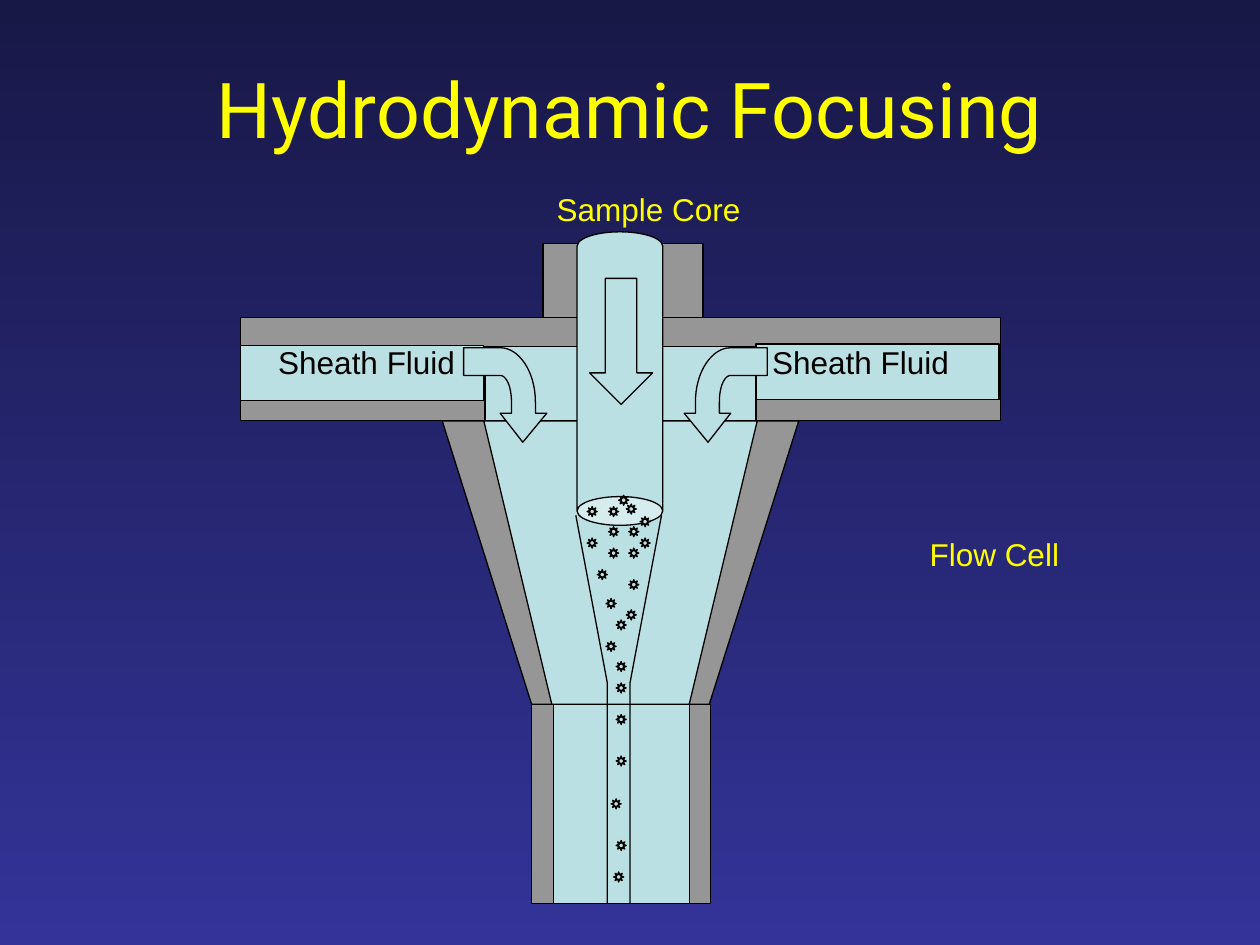
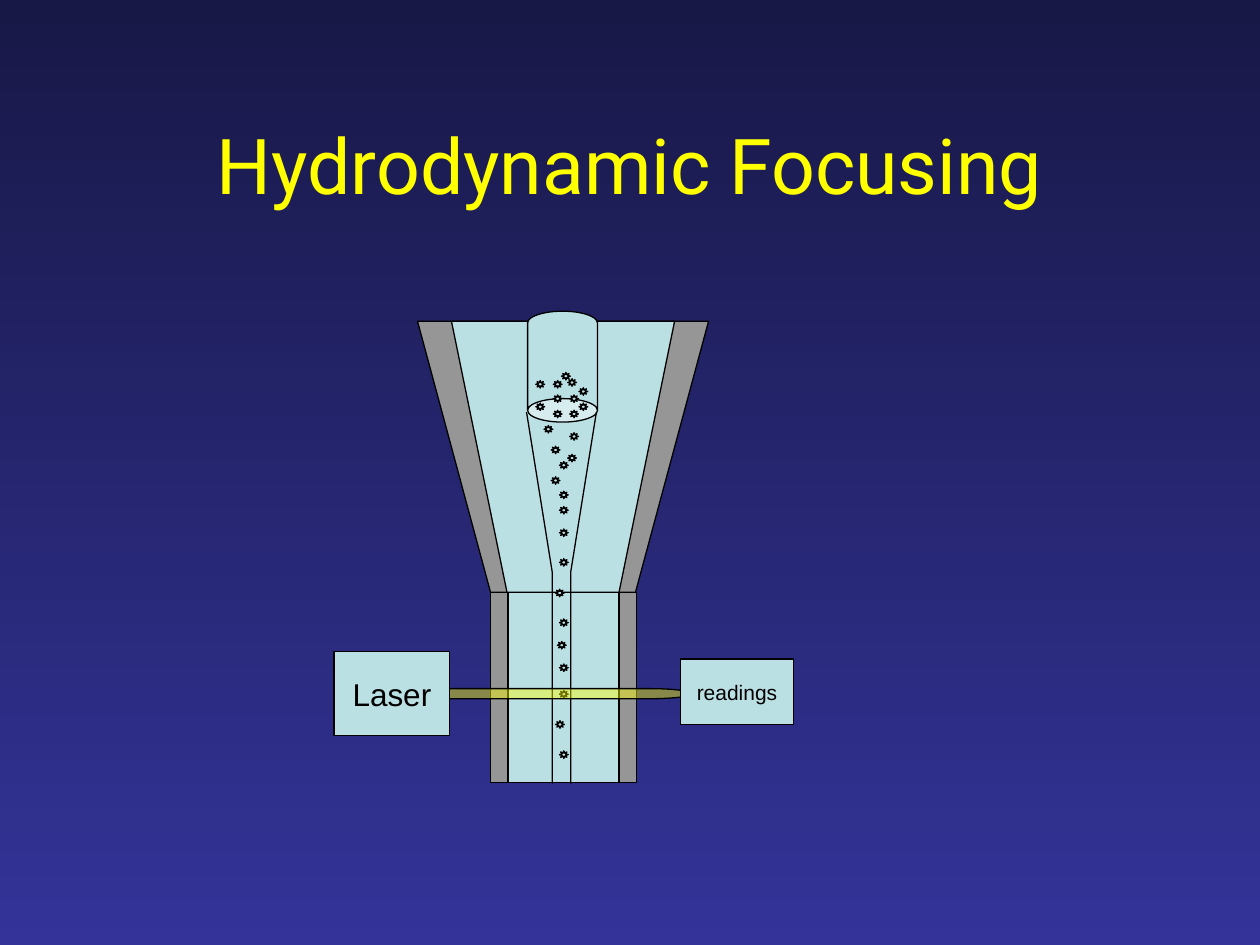
"""Build two slides on hydrodynamic focusing in a flow cell."""
from lxml.etree import SubElement
from pptx import Presentation
from pptx.dml.color import RGBColor
from pptx.enum.shapes import MSO_SHAPE
from pptx.enum.text import MSO_ANCHOR, MSO_AUTO_SIZE, PP_ALIGN
from pptx.oxml.ns import qn
from pptx.util import Inches, Pt

COLORS = {"top": "181847", "bottom": "333399", "accent": "FFFF00",
          "wall": "969696", "fluid": "BBE0E3", "ink": "000000"}
TITLE = "Hydrodynamic Focusing"

CHANNELS = [
    ("wall", 4.31, 1.93, 1.27, 1.01),
    ("wall", 1.91, 2.52, 6.03, 0.82),
    ("fluid", 6, 2.73, 1.93, 0.44),
    ("fluid", 1.91, 2.74, 1.93, 0.44),
    ("fluid", 3.85, 2.75, 2.15, 0.59),
]
LABELS = [
    ("Sheath Fluid", "ink", 2.11, 2.67, 1.61),
    ("Sheath Fluid", "ink", 6.03, 2.67, 1.61),
    ("Sample Core", "accent", 4.32, 1.46, 1.66),
    ("Flow Cell", "accent", 7.28, 4.2, 1.24),
]
BOXES = [("Laser", 18, 2.65, 5.17, 0.92, 0.67),
         ("readings", 12, 5.4, 5.23, 0.9, 0.52)]

FUNNELS = [("wall", (3.51, 4.22, 5.63, 6.34)),
           ("fluid", (3.84, 4.38, 5.47, 6.01))]
TUBES = [("wall", 4.22, 5.64), ("fluid", 4.39, 5.47)]
INJECTOR = (4.58, 5.26)
CORE_SIDES = [(4.57, 4.82), (5.25, 5)]
CELLS = [
    {"top": 3.34, "neck": 5.59, "end": 7.17, "injector": (1.84, 4.17),
     "core": (4.09, 5.42, 7.17), "sun": (0.08, 0.08),
     "x_map": (1, 0), "y_map": (1, 0)},
    {"top": 2.55, "neck": 4.7, "end": 6.21, "injector": (2.47, 3.35),
     "core": (3.27, 4.54, 6.22), "sun": (0.07, 0.06),
     "x_map": (0.816, 0.45), "y_map": (0.714, 0.15)},
]
PARTICLES = [
    (4.81, 4.75), (4.97, 4.84), (5.08, 4.27), (4.91, 3.93), (5.08, 4.1),
    (4.99, 4.35), (4.83, 4.02), (4.99, 4.18), (4.89, 4.92), (4.97, 4),
    (4.83, 4.18), (4.66, 4.02), (4.83, 4.35), (4.66, 4.27), (4.74, 4.52),
    (4.99, 4.6), (4.81, 5.09), (4.89, 5.25), (4.89, 5.42), (4.89, 5.67),
    (4.89, 6), (4.85, 6.34), (4.89, 6.67), (4.87, 6.92),
]
LOWER_PARTICLES = [(4.44, 5.27), (4.44, 5.48), (4.41, 5.72), (4.44, 5.96)]

OUTER_BEND = [(4.25, 3.19), (4.25, 2.95), (4.12, 2.76), (3.97, 2.76)]
INNER_BEND = [(3.97, 2.98), (4.02, 2.98), (4.06, 3.07), (4.06, 3.19)]
MIRROR_SUM = 9.77


def rgb(name):
    return RGBColor.from_string(COLORS[name])


def style(sp, fill):
    sp.shadow.inherit = False
    if fill:
        sp.fill.solid()
        sp.fill.fore_color.rgb = rgb(fill)
    else:
        sp.fill.background()
    sp.line.color.rgb = rgb("ink")
    sp.line.width = Pt(0.75)
    return sp


def add_preset(s, kind, fill, x, y, w, h, flip=False):
    sp = s.shapes.add_shape(kind, Inches(x), Inches(y), Inches(w), Inches(h))
    if flip:
        sp._element.spPr.get_or_add_xfrm().set("flipV", "1")
    return style(sp, fill)


def add_outline(s, fill, points, close=True):
    pts = [(Inches(x), Inches(y)) for x, y in points]
    builder = s.shapes.build_freeform(*pts[0])
    builder.add_line_segments(pts[1:], close=close)
    return style(builder.convert_to_shape(), fill)


def write(sp, text, size, color, font="Arial", align=None, anchor=None, wrap=False):
    tf = sp.text_frame
    tf.word_wrap = wrap
    if anchor is not None:
        tf.vertical_anchor = anchor
    p = tf.paragraphs[0]
    p.alignment = align
    r = p.add_run()
    r.text = text
    r.font.size = Pt(size)
    r.font.name = font
    r.font.color.rgb = rgb(color)


def add_textbox(s, x, y, w, h):
    return s.shapes.add_textbox(Inches(x), Inches(y), Inches(w), Inches(h))


def add_slide(prs, title_y):
    s = prs.slides.add_slide(prs.slide_layouts[6])
    fill = s.background.fill
    fill.gradient()
    fill.gradient_angle = 270
    for stop, name in zip(fill.gradient_stops, ("top", "bottom")):
        stop.color.rgb = rgb(name)
    write(add_textbox(s, 0.75, title_y, 8.5, 1.25), TITLE, 44, "accent",
          "Roboto", PP_ALIGN.CENTER, MSO_ANCHOR.MIDDLE, True)
    return s


def add_particles(s, places, size):
    for x, y in places:
        add_preset(s, MSO_SHAPE.SUN, "fluid", x, y, *size)


def add_flow_cell(s, cell):
    def fx(x):
        return cell["x_map"][0] * x + cell["x_map"][1]

    def fy(y):
        return cell["y_map"][0] * y + cell["y_map"][1]

    top, neck, end = cell["top"], cell["neck"], cell["end"]
    for fill, xs in FUNNELS:
        add_outline(s, fill, zip(map(fx, xs), (top, neck, neck, top)))
    for fill, left, right in TUBES:
        add_preset(s, MSO_SHAPE.RECTANGLE, fill, fx(left), neck,
                   fx(right) - fx(left), end - neck)
    left, right = map(fx, INJECTOR)
    y1, y2 = cell["injector"]
    can = add_preset(s, MSO_SHAPE.CAN, "fluid", left, y1, right - left, y2 - y1, True)
    can.adjustments[0] = 0.336
    for wide, narrow in CORE_SIDES:
        xs = fx(wide), fx(narrow), fx(narrow)
        add_outline(s, None, zip(xs, cell["core"]), close=False)
    add_particles(s, [(fx(x), fy(y)) for x, y in PARTICLES], cell["sun"])


def curve(bend, steps=16):
    points = []
    for i in range(steps + 1):
        t = i / steps
        weights = (1 - t) ** 3, 3 * t * (1 - t) ** 2, 3 * t * t * (1 - t), t ** 3
        points.append(tuple(sum(k * pt[axis] for k, pt in zip(weights, bend))
                            for axis in (0, 1)))
    return points


def add_sheath_arrows(s):
    left = ([(4.15, 3.51), (4.34, 3.28), (4.25, 3.28)] + curve(OUTER_BEND)
            + [(3.68, 2.76), (3.68, 2.98)] + curve(INNER_BEND)
            + [(4.06, 3.28), (3.97, 3.28)])
    add_outline(s, "fluid", left)
    add_outline(s, "fluid", [(MIRROR_SUM - x, y) for x, y in left])


def add_focusing_slide(prs):
    s = add_slide(prs, 0.23)
    for fill, *box in CHANNELS:
        add_preset(s, MSO_SHAPE.RECTANGLE, fill, *box)
    add_flow_cell(s, CELLS[0])
    add_sheath_arrows(s)
    add_preset(s, MSO_SHAPE.DOWN_ARROW, "fluid", 4.68, 2.21, 0.5, 1)
    for text, color, x, y, w in LABELS:
        sp = add_textbox(s, x, y, w, 0.4)
        write(sp, text, 18, color)
        sp.text_frame.auto_size = MSO_AUTO_SIZE.SHAPE_TO_FIT_TEXT


def add_laser_slide(prs):
    s = add_slide(prs, 0.67)
    add_flow_cell(s, CELLS[1])
    add_particles(s, LOWER_PARTICLES, CELLS[1]["sun"])
    beam = add_preset(s, MSO_SHAPE.CAN, "accent", 4.11, 4.17, 0.08, 2.67, True)
    beam.rotation = 90
    beam.adjustments[0] = 8
    color = beam._element.spPr.find(qn("a:solidFill"))[0]
    SubElement(color, qn("a:alpha"), val="44000")
    for text, size, *box in BOXES:
        sp = add_preset(s, MSO_SHAPE.RECTANGLE, "fluid", *box)
        write(sp, text, size, "ink", align=PP_ALIGN.CENTER, anchor=MSO_ANCHOR.MIDDLE)


def main():
    prs = Presentation()
    prs.slide_width, prs.slide_height = Inches(10), Inches(7.5)
    add_focusing_slide(prs)
    add_laser_slide(prs)
    prs.save("out.pptx")


if __name__ == "__main__":
    main()
